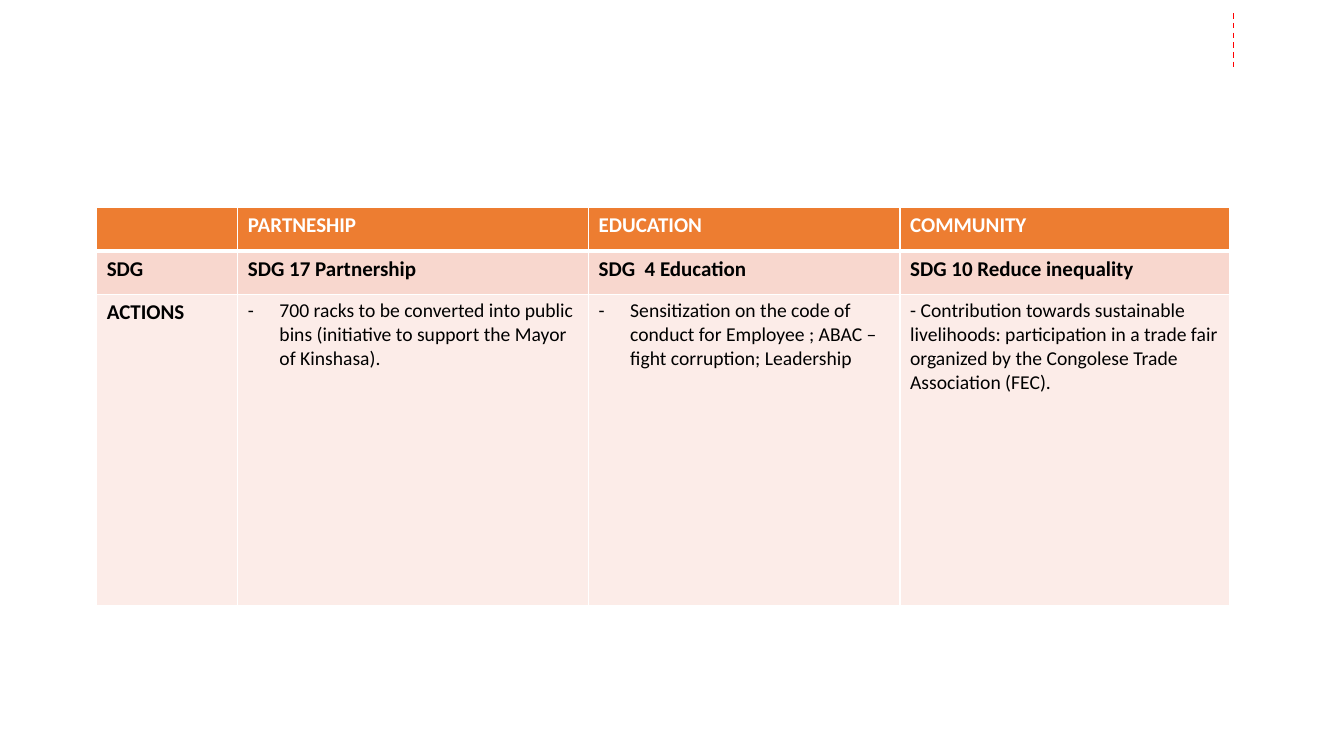
from dataclasses import dataclass

import pptx
import pptx.dml.color
import pptx.enum.dml
import pptx.enum.shapes
import pptx.oxml
import pptx.oxml.ns
import pptx.slide
import pptx.table
import pptx.util
from lxml import etree

Pt = pptx.util.Pt

COLORS = {
    "header": "ED7D31",
    "goal": "F8D7CE",
    "action": "FCECE8",
    "border": "FFFFFF",
    "header_text": "FFFFFF",
    "text": "000000",
    "marker": "FF0000",
}
FONT = "Calibri"
TABLE_LEFT, TABLE_TOP = 69.12, 148.32
COLUMN_WIDTHS = (100.8, 250.56, 222.48, 235.44)
DASH_INDENT = 22.5
HEADER_RULE, THIN_RULE = 3, 1


@dataclass(frozen=True)
class CellText:
    text: str
    size: float = 15
    bold: bool = True
    dashed: bool = False


@dataclass(frozen=True)
class TableRow:
    height: float
    fill: str
    text_color: str
    top_rule: float
    bottom_rule: float
    cells: tuple[CellText, ...]


ROWS = (
    TableRow(30.96, "header", "header_text", THIN_RULE, HEADER_RULE, (
        CellText(""),
        CellText("PARTNESHIP"),
        CellText("EDUCATION"),
        CellText("COMMUNITY"),
    )),
    TableRow(30.96, "goal", "text", HEADER_RULE, THIN_RULE, (
        CellText("SDG"),
        CellText("SDG 17 Partnership"),
        CellText("SDG  4 Education"),
        CellText("SDG 10 Reduce inequality"),
    )),
    TableRow(222.48, "action", "text", THIN_RULE, THIN_RULE, (
        CellText("ACTIONS"),
        CellText("700 racks to be converted into public bins (initiative to support "
                 "the Mayor of Kinshasa).", 14, False, True),
        CellText("Sensitization on the code of conduct for Employee ; ABAC – fight "
                 "corruption; Leadership", 14, False, True),
        CellText("- Contribution towards sustainable livelihoods: participation in a "
                 "trade fair organized by the Congolese Trade Association (FEC).", 14, False),
    )),
)


def rgb(name: str) -> pptx.dml.color.RGBColor:
    return pptx.dml.color.RGBColor.from_string(COLORS[name])


def add_child(parent: etree._Element, tag: str, **attributes: str) -> etree._Element:
    return etree.SubElement(parent, pptx.oxml.ns.qn(tag), attributes)


def set_borders(cell: pptx.table._Cell, row: TableRow) -> None:
    properties = cell._tc.get_or_add_tcPr()
    widths = {"a:lnL": THIN_RULE, "a:lnR": THIN_RULE,
              "a:lnT": row.top_rule, "a:lnB": row.bottom_rule}
    for tag, width in widths.items():
        line = add_child(properties, tag, w=str(int(Pt(width))))
        add_child(add_child(line, "a:solidFill"), "a:srgbClr", val=COLORS["border"])


def fill_cell(cell: pptx.table._Cell, row: TableRow, content: CellText) -> None:
    set_borders(cell, row)
    cell.fill.solid()
    cell.fill.fore_color.rgb = rgb(row.fill)
    if not content.text:
        return
    paragraph = cell.text_frame.paragraphs[0]
    if content.dashed:
        properties = paragraph._p.get_or_add_pPr()
        indent = int(Pt(DASH_INDENT))
        properties.set("marL", str(indent))
        properties.set("indent", str(-indent))
        add_child(properties, "a:buFont", typeface=FONT)
        add_child(properties, "a:buChar", char="-")
    run = paragraph.add_run()
    run.text = content.text
    run.font.name = FONT
    run.font.size = Pt(content.size)
    run.font.bold = content.bold
    run.font.color.rgb = rgb(row.text_color)


def add_goals_table(slide: pptx.slide.Slide) -> None:
    table = slide.shapes.add_table(
        len(ROWS), len(COLUMN_WIDTHS), Pt(TABLE_LEFT), Pt(TABLE_TOP),
        Pt(sum(COLUMN_WIDTHS)), Pt(sum(row.height for row in ROWS))).table
    for column, width in zip(table.columns, COLUMN_WIDTHS):
        column.width = Pt(width)
    for table_row, row in zip(table.rows, ROWS):
        table_row.height = Pt(row.height)
        for cell, content in zip(table_row.cells, row.cells):
            fill_cell(cell, row, content)


def add_corner_marker(slide: pptx.slide.Slide) -> None:
    marker = slide.shapes.add_connector(
        pptx.enum.shapes.MSO_CONNECTOR.STRAIGHT,
        Pt(881.28), Pt(9.36), Pt(881.28), Pt(47.52))
    marker.line.color.rgb = rgb("marker")
    marker.line.width = Pt(1)
    marker.line.dash_style = pptx.enum.dml.MSO_LINE.DASH
    add_child(marker._element.spPr, "a:effectLst")


def main() -> None:
    presentation = pptx.Presentation()
    presentation.slide_width = Pt(960)
    presentation.slide_height = Pt(540)
    slide = presentation.slides.add_slide(presentation.slide_layouts[6])
    add_corner_marker(slide)
    add_goals_table(slide)
    presentation.save("out.pptx")


if __name__ == "__main__":
    main()
